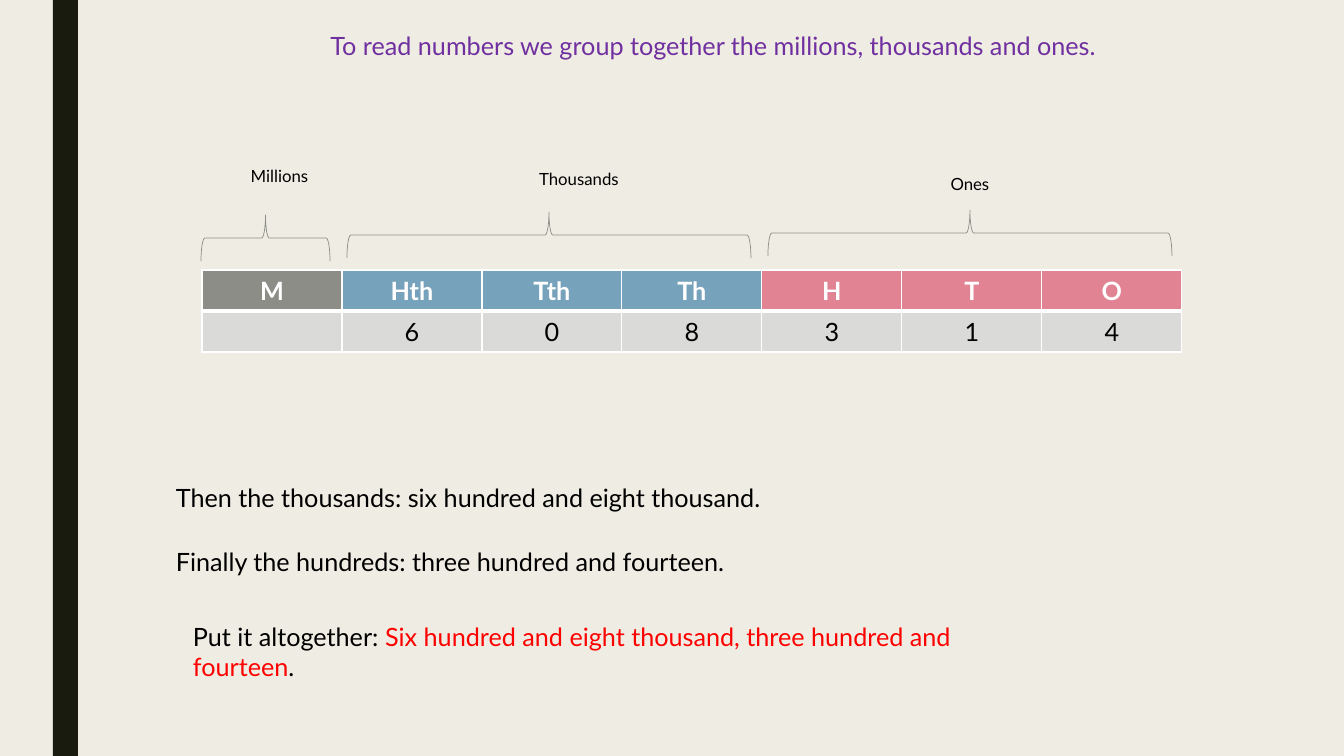
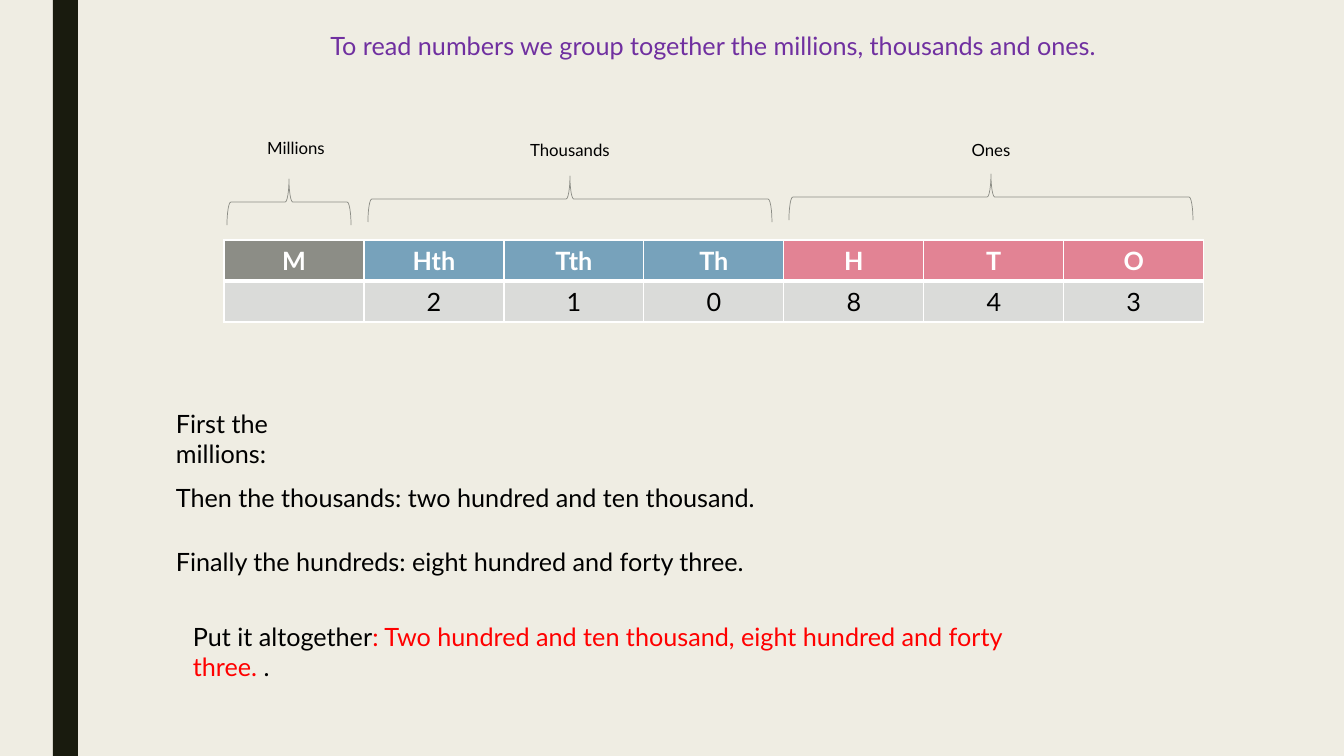
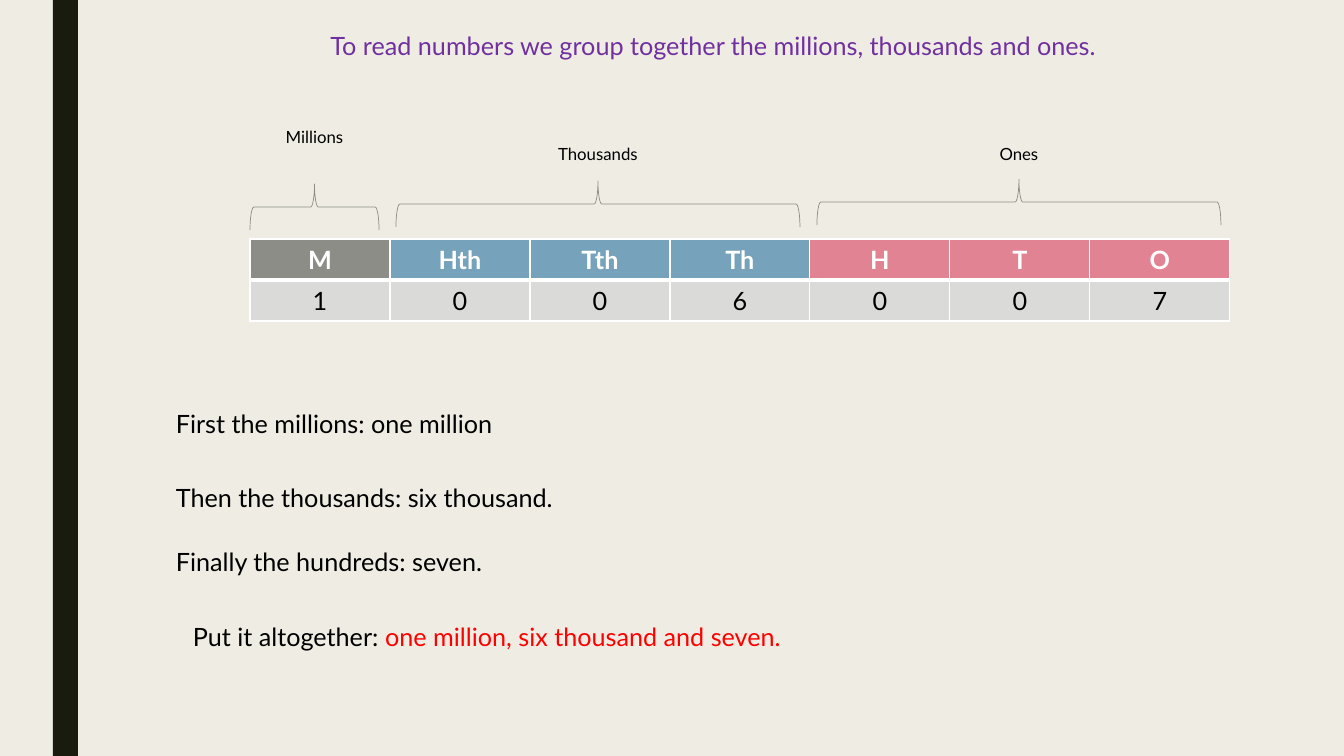
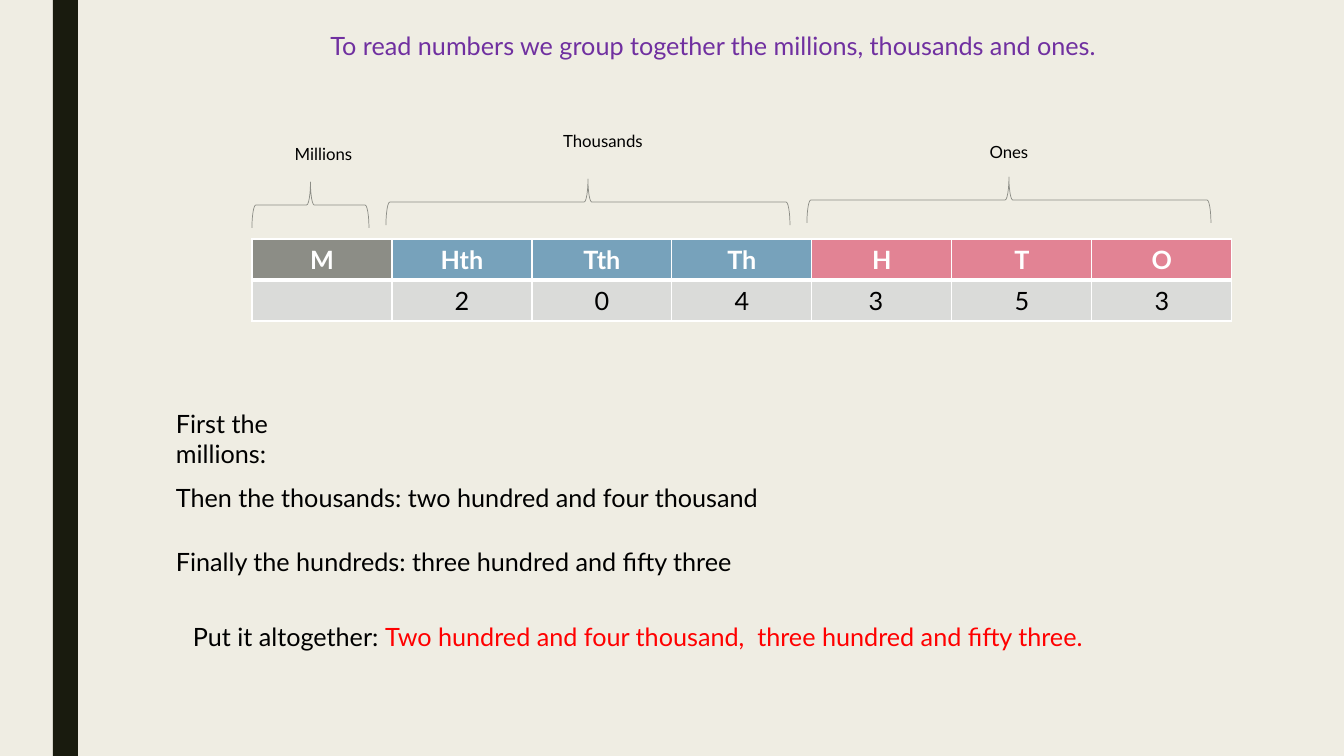
from dataclasses import dataclass

from lxml.etree import SubElement
from pptx import Presentation
from pptx.dml.color import RGBColor
from pptx.enum.shapes import MSO_SHAPE as Shape
from pptx.enum.text import MSO_ANCHOR as Anchor, MSO_AUTO_SIZE as AutoSize, PP_ALIGN as Align
from pptx.oxml.ns import qn
from pptx.util import Emu, Pt

SLIDE_WIDTH, SLIDE_HEIGHT = 1344, 756
EMU_PER_PX = 12192000 / SLIDE_WIDTH


@dataclass(frozen=True)
class Theme:
    font: str = "Lato"
    background: str = "EFEDE3"
    band: str = "191B0E"
    title: str = "7030A0"
    text: str = "000000"
    answer: str = "FF0000"
    white: str = "FFFFFF"
    millions: str = "8C8D86"
    thousands: str = "77A2BB"
    ones: str = "E28394"
    digits: str = "DADBD9"
    text_size: int = 18
    label_size: int = 12


THEME = Theme()
TITLE = "To read numbers we group together the millions, thousands and ones. "
COLUMNS = [("M", THEME.millions),
           ("Hth", THEME.thousands), ("Tth", THEME.thousands), ("Th", THEME.thousands),
           ("H", THEME.ones), ("T", THEME.ones), ("O", THEME.ones)]
CELL_WIDTH, CELL_HEIGHT = 140, 41
BRACE_WIDTH, BRACE_HEIGHT, BRACE_GAP = 404, 46, 17
LABEL_WIDTH, LABEL_HEIGHT, LINE_HEIGHT = 227, 30, 40

# table and braces: left, top; labels: shift from the brace's centre, top
# lines: text, width; answer: runs with colours, width
LESSONS = [
    dict(table=(202, 270), digits=["", "6", "0", "8", "3", "1", "4"],
         braces=(201, 215), millions_width=129,
         labels=[(14, 161), (30, 164), (0, 169)],
         lines=[None,
                ("Then the thousands: six hundred and eight thousand.", 640),
                ("Finally the hundreds: three hundred and fourteen.", 640)],
         answer=([("Put it altogether:", THEME.text),
                  (" Six hundred and eight thousand, three hundred and fourteen", THEME.answer),
                  (".", THEME.text)], 860)),
    dict(table=(224, 240), digits=["", "2", "1", "0", "8", "4", "3"],
         braces=(227, 179), millions_width=124,
         labels=[(7, 133), (0, 135), (0, 135)],
         lines=[("First the millions:", 200),
                ("Then the thousands: two hundred and ten thousand.", 640),
                ("Finally the hundreds: eight hundred and forty three.", 640)],
         answer=([("Put it altogether", THEME.text),
                  (": Two hundred and ten thousand, eight hundred and forty three. ", THEME.answer),
                  (".", THEME.text)], 870)),
    dict(table=(250, 239), digits=["1", "0", "0", "6", "0", "0", "7"],
         braces=(250, 184), millions_width=129,
         labels=[(0, 122), (0, 139), (0, 139)],
         lines=[("First the millions: one million", 350),
                ("Then the thousands: six thousand.", 640),
                ("Finally the hundreds: seven.", 640)],
         answer=([("Put it altogether: ", THEME.text),
                  ("one million, six thousand and seven.", THEME.answer)], 640)),
    dict(table=(252, 239), digits=["", "2", "0", "4", "3", "5", "3"], right_pads={4: 22},
         braces=(252, 182), millions_width=117,
         labels=[(13, 139), (15, 126), (0, 137)],
         lines=[("First the millions:", 200),
                ("Then the thousands: two hundred and four thousand", 640),
                ("Finally the hundreds: three hundred and fifty three", 640)],
         answer=([("Put it altogether: ", THEME.text),
                  ("Two hundred and four thousand,  three hundred and fifty three.",
                   THEME.answer)], 930)),
]


def px(length):
    return Emu(round(length * EMU_PER_PX))


def apply(target, values):
    for name, value in values.items():
        setattr(target, name, value)


def fill_solid(fill, color):
    fill.solid()
    fill.fore_color.rgb = RGBColor.from_string(color)


def write_runs(frame, runs, align=Align.LEFT, size=THEME.text_size, bold=False):
    """Write (text, colour) runs into the frame's first paragraph."""
    paragraph = frame.paragraphs[0]
    paragraph.alignment = align
    for text, color in runs:
        run = paragraph.add_run()
        run.text = text
        apply(run.font, dict(name=THEME.font, size=Pt(size), bold=bold))
        run.font.color.rgb = RGBColor.from_string(color)


def place_text(shape, box, runs, **style):
    apply(shape, dict(zip(("left", "top", "width", "height"), map(px, box))))
    apply(shape.text_frame, dict(word_wrap=True, auto_size=AutoSize.SHAPE_TO_FIT_TEXT,
                                 vertical_anchor=Anchor.TOP))
    write_runs(shape.text_frame, runs, **style)


def add_text(slide, box, runs, **style):
    place_text(slide.shapes.add_textbox(*map(px, box)), box, runs, **style)


def set_borders(cell, widths):
    properties = cell._tc.get_or_add_tcPr()
    for side, width in widths.items():
        line = SubElement(properties, qn(f"a:ln{side}"), w=str(Pt(width)))
        color = SubElement(SubElement(line, qn("a:solidFill")), qn("a:srgbClr"))
        color.set("val", THEME.white)


def style_master(presentation, slide):
    """Give the master the background and the side band."""
    master = presentation.slide_master
    fill_solid(master.background.fill, THEME.background)
    band = slide.shapes.add_shape(Shape.RECTANGLE, px(53), 0, px(25), px(SLIDE_HEIGHT))
    band.shadow.inherit = False
    fill_solid(band.fill, THEME.band)
    band.line.fill.background()
    band.element.nvSpPr.cNvPr.set("id", "99")
    master.shapes.element.insert(2, band.element)


def add_place_value_table(slide, left, top, digits, right_pads):
    size = (CELL_WIDTH * len(COLUMNS), CELL_HEIGHT * 2)
    table = slide.shapes.add_table(2, len(COLUMNS), *map(px, (left, top, *size))).table
    table.horz_banding = False
    for column in table.columns:
        column.width = px(CELL_WIDTH)
    for row in table.rows:
        row.height = px(CELL_HEIGHT)

    def fill_cell(cell, text, fill, color, bold, borders):
        set_borders(cell, borders)
        fill_solid(cell.fill, fill)
        cell.vertical_anchor = Anchor.MIDDLE
        if text:
            write_runs(cell.text_frame, [(text, color)], Align.CENTER, bold=bold)

    for index, ((heading, fill), digit) in enumerate(zip(COLUMNS, digits)):
        fill_cell(table.cell(0, index), heading, fill, THEME.white, True,
                  dict(L=1, R=1, T=1, B=3))
        digit_cell = table.cell(1, index)
        fill_cell(digit_cell, digit, THEME.digits, THEME.text, False,
                  dict(L=1, R=1, T=3, B=1))
        if index in right_pads:
            digit_cell.margin_right = px(right_pads[index])


def add_brace(slide, left, top, width):
    """Draw an upward brace; the shape is turned a quarter about its centre."""
    turn = (width - BRACE_HEIGHT) / 2
    brace = slide.shapes.add_shape(Shape.RIGHT_BRACE, px(left + turn), px(top - turn),
                                   px(BRACE_HEIGHT), px(width))
    brace.rotation = 270
    brace.shadow.inherit = False
    brace.fill.background()
    brace.line.color.rgb = RGBColor.from_string(THEME.millions)
    brace.line.width = Pt(0.5)


def add_groups(slide, left, top, millions_width, labels):
    """Place the three braces side by side, each with its label above."""
    names = ("Millions", "Thousands", "Ones")
    widths = (millions_width, BRACE_WIDTH, BRACE_WIDTH)
    rises = (0, 3, 5)
    for name, width, rise, (shift, label_top) in zip(names, widths, rises, labels):
        add_brace(slide, left, top - rise, width)
        label_left = left + (width - LABEL_WIDTH) / 2 + shift
        add_text(slide, (label_left, label_top, LABEL_WIDTH, LABEL_HEIGHT),
                 [(name, THEME.text)], align=Align.CENTER, size=THEME.label_size)
        left += width + BRACE_GAP


def add_reading(slide, left, lines, answer):
    for top, line in zip((403, 477, 541), lines):
        if line:
            text, width = line
            add_text(slide, (left, top, width, LINE_HEIGHT), [(text, THEME.text)])
    runs, width = answer
    add_text(slide, (left + 17, 616, width, LINE_HEIGHT), runs)


def build_lesson(slide, lesson):
    # Title
    place_text(slide.shapes.title, (210, 25, 1013, LINE_HEIGHT),
               [(TITLE, THEME.title)], align=Align.CENTER)
    # Place values
    add_place_value_table(slide, *lesson["table"], lesson["digits"],
                          lesson.get("right_pads", {}))
    add_groups(slide, *lesson["braces"], lesson["millions_width"], lesson["labels"])
    # Number in words
    add_reading(slide, 166, lesson["lines"], lesson["answer"])


def main():
    presentation = Presentation()
    apply(presentation, dict(slide_width=px(SLIDE_WIDTH), slide_height=px(SLIDE_HEIGHT)))
    title_only = presentation.slide_layouts.get_by_name("Title Only")
    slides = [presentation.slides.add_slide(title_only) for _ in LESSONS]
    style_master(presentation, slides[0])
    for slide, lesson in zip(slides, LESSONS):
        build_lesson(slide, lesson)
    presentation.save("out.pptx")


if __name__ == "__main__":
    main()
